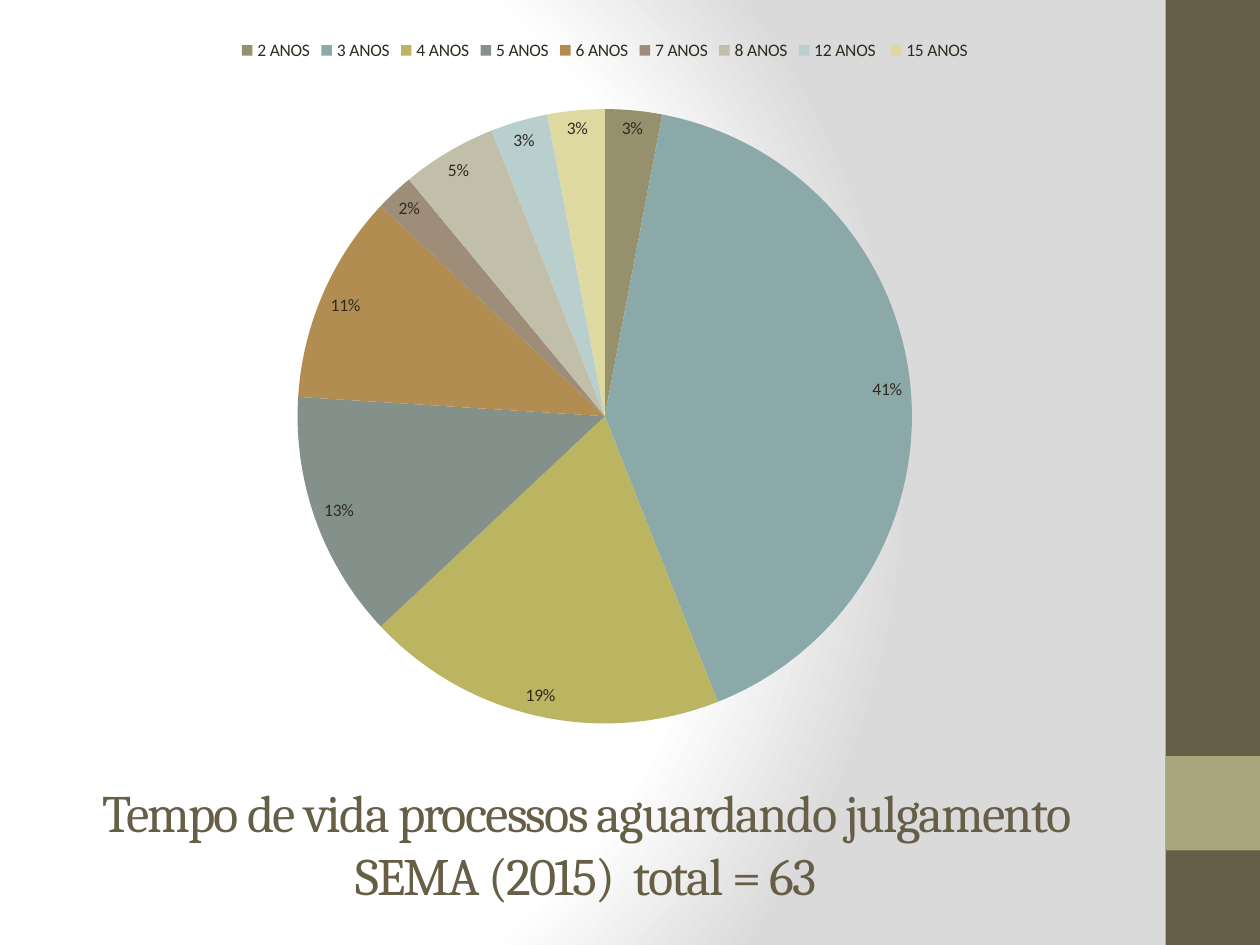
from dataclasses import dataclass

from lxml.etree import SubElement
from pptx import Presentation
from pptx.chart.data import CategoryChartData
from pptx.dml.color import RGBColor
from pptx.enum.chart import XL_CHART_TYPE as ChartType
from pptx.enum.chart import XL_LABEL_POSITION as LabelPosition
from pptx.enum.chart import XL_LEGEND_POSITION as LegendPosition
from pptx.enum.shapes import MSO_SHAPE as Preset
from pptx.enum.text import MSO_ANCHOR as Anchor
from pptx.enum.text import MSO_AUTO_SIZE as AutoSize
from pptx.enum.text import PP_ALIGN as Align
from pptx.oxml.ns import qn
from pptx.util import Inches, Pt


@dataclass(frozen=True)
class Theme:
    brown: str = "675E47"
    olive: str = "A9A57C"
    ink: str = "2F2B20"
    white: str = "FFFFFF"
    grey: str = "DADADA"
    title_font: str = "Cambria"
    chart_font: str = "Calibri"
    title_size: int = 30
    chart_size: int = 10


THEME = Theme()
WIDTH, HEIGHT = 10, 7.5
TITLE = "Tempo de vida processos aguardando julgamento SEMA (2015)  total = 63"
TITLE_AREA = (0.2, 6.01, 8.9, 1.36)
CHART_AREA = (0.51, 0.21, 8.58, 5.67)

# age of the case, percentage, slice colour
SLICES = [
    ("2 ANOS", 3, "96916C"),
    ("3 ANOS", 41, "8BA9A8"),
    ("4 ANOS", 19, "BBB460"),
    ("5 ANOS", 13, "84908A"),
    ("6 ANOS", 11, "B28D51"),
    ("7 ANOS", 2, "9D8D79"),
    ("8 ANOS", 5, "C1BFA9"),
    ("12 ANOS ", 3, "B8CFCE"),
    ("15 ANOS", 3, "DED9A0"),
]

# sidebar parts as left, top, width, height in shares of the slide
SIDEBAR = [
    ((0.925, 0, 0.075, 1), THEME.brown),
    ((0.925, 0.8, 0.075, 0.1), THEME.olive),
]


def inches(area):
    return [Inches(length) for length in area]


def color(code):
    return RGBColor.from_string(code)


def set_format(target, **values):
    for name, value in values.items():
        setattr(target, name, value)


def paint_background(page):
    """Radial fade from white to grey, centred left of the middle."""
    fill = page.background.fill
    fill.gradient()
    gradient = next(page.element.iter(qn("a:gradFill")))
    for child in list(gradient):
        gradient.remove(child)
    stops = SubElement(gradient, qn("a:gsLst"))
    for share, code in ((0, THEME.white), (75, THEME.white), (100, THEME.grey)):
        stop = SubElement(stops, qn("a:gs"), pos=str(share * 1000))
        SubElement(stop, qn("a:srgbClr"), val=code)
    circle = SubElement(gradient, qn("a:path"), {"path": "circle"})
    SubElement(circle, qn("a:fillToRect"),
               l="20000", t="50000", r="100000", b="50000")


def add_sidebar(page):
    for (left, top, width, height), code in SIDEBAR:
        area = (left * WIDTH, top * HEIGHT, width * WIDTH, height * HEIGHT)
        bar = page.shapes.add_shape(Preset.RECTANGLE, *inches(area))
        bar.shadow.inherit = False
        bar.fill.solid()
        bar.fill.fore_color.rgb = color(code)
        bar.line.fill.background()


def format_title(page):
    title = page.shapes.title
    left, top, width, height = inches(TITLE_AREA)
    set_format(title, left=left, top=top, width=width, height=height)
    set_format(title.text_frame, word_wrap=True, auto_size=AutoSize.NONE,
               vertical_anchor=Anchor.MIDDLE)
    para = title.text_frame.paragraphs[0]
    para.alignment = Align.CENTER
    span = para.add_run()
    span.text = TITLE
    set_format(span.font, name=THEME.title_font, size=Pt(THEME.title_size))
    span.font.color.rgb = color(THEME.brown)
    span.font._element.set("spc", "-100")


def add_pie(page):
    names, shares, codes = zip(*SLICES)
    data = CategoryChartData()
    data.categories = names
    data.add_series("Series 1", shares)
    chart = page.shapes.add_chart(ChartType.PIE, *inches(CHART_AREA), data).chart
    set_format(chart, has_title=False, has_legend=True)
    set_format(chart.font, name=THEME.chart_font, size=Pt(THEME.chart_size))
    chart.font.color.rgb = color(THEME.ink)
    set_format(chart.legend, position=LegendPosition.TOP, include_in_layout=False)

    plot = chart.plots[0]
    set_format(plot, vary_by_categories=True, has_data_labels=True)
    set_format(plot.data_labels, show_percentage=True, show_value=False,
               number_format="0%", number_format_is_linked=False,
               position=LabelPosition.BEST_FIT)
    for index, code in enumerate(codes):
        piece = plot.series[0].points[index].format
        piece.fill.solid()
        piece.fill.fore_color.rgb = color(code)
        piece.line.fill.background()


def main():
    deck = Presentation()
    set_format(deck, slide_width=Inches(WIDTH), slide_height=Inches(HEIGHT))
    page = deck.slides.add_slide(deck.slide_layouts[5])
    paint_background(page)
    add_sidebar(page)
    format_title(page)
    add_pie(page)
    deck.save("out.pptx")


if __name__ == "__main__":
    main()
